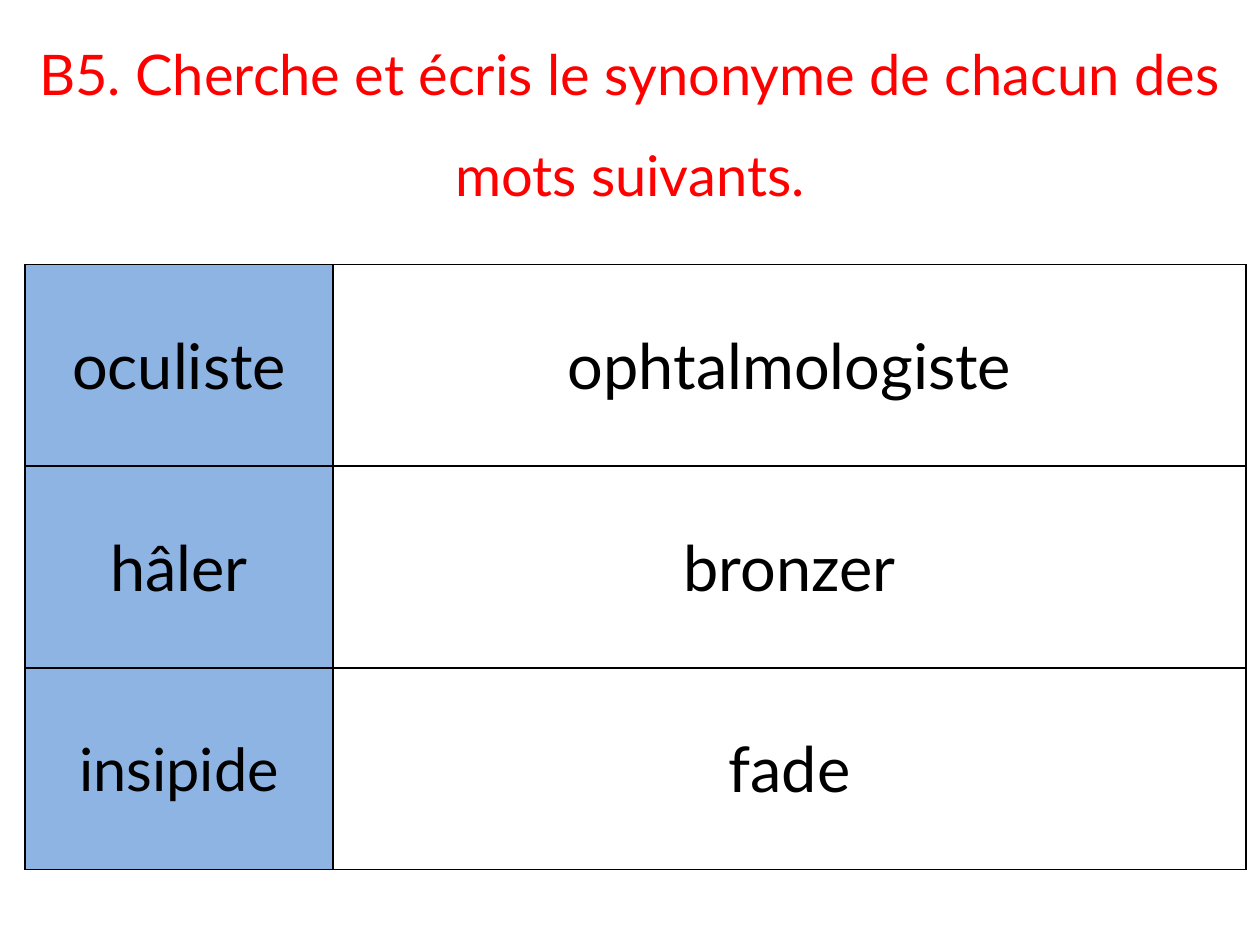
from lxml import etree
from pptx import Presentation
from pptx.dml.color import RGBColor
from pptx.enum.text import MSO_ANCHOR, MSO_AUTO_SIZE, PP_ALIGN
from pptx.oxml.ns import qn
from pptx.util import Pt

HEADING = "B5. Cherche et écris le synonyme de chacun des mots suivants."
SYNONYMS = [  # word, word size, synonym
    ("oculiste", 36, "ophtalmologiste"),
    ("hâler", 36, "bronzer"),
    ("insipide", 34, "fade"),
]

RED = RGBColor(0xFF, 0x00, 0x00)
BLACK = RGBColor(0x00, 0x00, 0x00)
WHITE = RGBColor(0xFF, 0xFF, 0xFF)
BLUE = RGBColor(0x8E, 0xB4, 0xE3)

FONT = "Lato"
CENTER = PP_ALIGN.CENTER
TOP, MIDDLE = MSO_ANCHOR.TOP, MSO_ANCHOR.MIDDLE
FIT_TEXT = MSO_AUTO_SIZE.SHAPE_TO_FIT_TEXT
TITLE_ONLY = 5

SLIDE_WIDTH, SLIDE_HEIGHT = 720, 540
HEADING_HEIGHT = 124
TABLE_LEFT, TABLE_TOP = 14.4, 151.2
COLUMN_WIDTHS = (176, 521.6)
ROW_HEIGHT = 115.2
BORDER_WIDTH = 1


def format_paragraph(paragraph, size, color):
    paragraph.alignment = CENTER
    paragraph.font.name = FONT
    paragraph.font.size = Pt(size)
    paragraph.font.color.rgb = color


def add_borders(cell):
    """Draw all four sides; the lines must come before the fill in tcPr."""
    properties = cell._tc.get_or_add_tcPr()
    for position, side in enumerate(("a:lnL", "a:lnR", "a:lnT", "a:lnB")):
        line = etree.Element(qn(side), w=str(Pt(BORDER_WIDTH)))
        fill = etree.SubElement(line, qn("a:solidFill"))
        etree.SubElement(fill, qn("a:srgbClr"), val=str(BLACK))
        properties.insert(position, line)


def fill_cell(cell, text, size, background):
    cell.text = text
    cell.vertical_anchor = MIDDLE
    format_paragraph(cell.text_frame.paragraphs[0], size, BLACK)
    cell.fill.solid()
    cell.fill.fore_color.rgb = background
    add_borders(cell)


def add_heading(slide):
    heading = slide.shapes.title
    heading.left, heading.top = Pt(0), Pt(0)
    heading.width, heading.height = Pt(SLIDE_WIDTH), Pt(HEADING_HEIGHT)
    frame = heading.text_frame
    frame.text = HEADING
    frame.word_wrap = True
    frame.auto_size = FIT_TEXT
    frame.vertical_anchor = TOP
    paragraph = frame.paragraphs[0]
    format_paragraph(paragraph, 32, RED)
    paragraph.line_spacing = 1.5
    paragraph.space_before = Pt(0)


def add_synonym_table(slide):
    table = slide.shapes.add_table(
        len(SYNONYMS), len(COLUMN_WIDTHS), Pt(TABLE_LEFT), Pt(TABLE_TOP),
        Pt(sum(COLUMN_WIDTHS)), Pt(ROW_HEIGHT * len(SYNONYMS))).table
    table.first_row = False
    table.horz_banding = False
    for column, width in zip(table.columns, COLUMN_WIDTHS):
        column.width = Pt(width)
    for row, (word, word_size, synonym) in enumerate(SYNONYMS):
        table.rows[row].height = Pt(ROW_HEIGHT)
        fill_cell(table.cell(row, 0), word, word_size, BLUE)
        fill_cell(table.cell(row, 1), synonym, 36, WHITE)


def main():
    presentation = Presentation()
    presentation.slide_width = Pt(SLIDE_WIDTH)
    presentation.slide_height = Pt(SLIDE_HEIGHT)
    slide = presentation.slides.add_slide(presentation.slide_layouts[TITLE_ONLY])
    add_heading(slide)
    add_synonym_table(slide)
    presentation.save("out.pptx")


if __name__ == "__main__":
    main()
